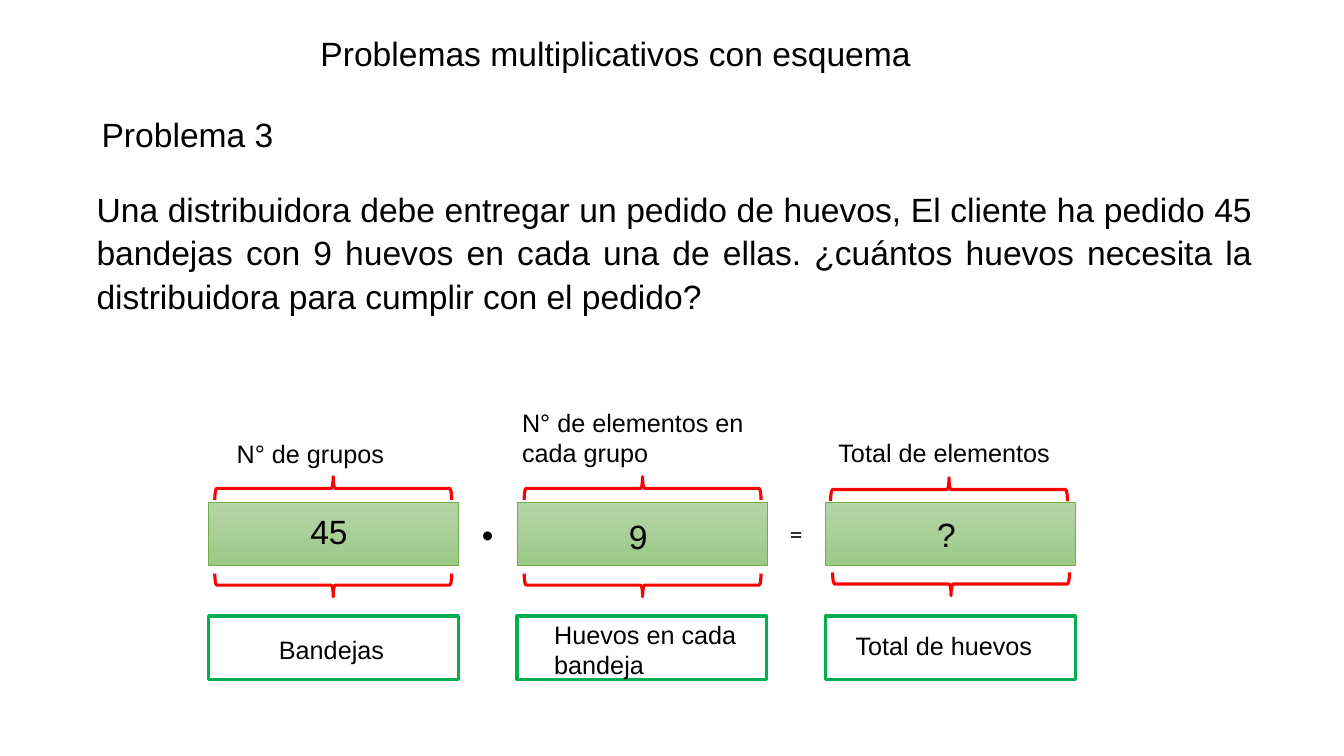
"""Build a slide that solves a multiplication problem with a bar scheme."""
from pptx import Presentation
from pptx.dml.color import RGBColor as RGB
from pptx.enum.shapes import MSO_SHAPE as Shape
from pptx.enum.text import MSO_AUTO_SIZE as Fit, PP_ALIGN as Align
from pptx.util import Pt

TITLE = ("Problemas multiplicativos con esquema", (221.8, 20.2, 440.6, 36))
HEAD = ("Problema 3", (65.5, 75.6, 139, 36.7))
BODY = ("Una distribuidora debe entregar un pedido de huevos, El cliente ha "
        "pedido 45 bandejas con 9 huevos en cada una de ellas. ¿cuántos huevos "
        "necesita la distribuidora para cumplir con el pedido?",
        (61.9, 129.6, 839.5, 99.4))
PARTS = [
    {"label": ("N° de grupos", (162, 309.6, 141.1, 28.8)),
     "value": ("45", (214.6, 361.4, 47.5, 36)),
     "unit": ("Bandejas", (192.2, 449.3, 91.4, 28.8)),
     "braces": ((238, 348.8), (238, 418))},
    {"label": ("N° de elementos en cada grupo", (365.8, 287.3, 185.8, 51.1)),
     "value": ("9", (442.1, 365, 28.1, 36)),
     "unit": ("Huevos en cada bandeja", (388.8, 438.5, 154.1, 51.1)),
     "braces": ((459, 348.8), (459, 418))},
    {"label": ("Total de elementos", (591.8, 308.9, 185.8, 28.8)),
     "value": ("?", (662.4, 363.6, 33.1, 36)),
     "unit": ("Total de huevos", (604.1, 446.4, 162, 28.8)),
     "braces": ((677.9, 349.6), (679.3, 417.2))},
]
SIGNS = ["•", "="]

THEME = {
    "ink": RGB(0, 0, 0), "white": RGB(255, 255, 255),
    "red": RGB(255, 0, 0), "green": RGB(0, 176, 80),
    "edge": RGB(0x70, 0xAD, 0x47),
    "fade": (RGB(0xB5, 0xD5, 0xA7), RGB(0x9C, 0xC9, 0x87)),
    "font": "Arial", "math": "Calibri", "big": 24, "small": 18,
    "thin": 0.5, "thick": 2.25,
}

LEFT, PITCH = 149, 220.3
WIDE, HIGH = 178.5, 45.4
BAR_TOP, BOX_TOP = 358.6, 440
BRACE_W, BRACE_H = 16.6, 169.2
SIGN_W, SIGN_H, SIGN_TOP = 27.4, 28.8, 366.5


def write(slide, text, box, size="small", font="font", align=None,
          wrap=True, space=None, after=None):
    """Add one text box."""
    frame = slide.shapes.add_textbox(*map(Pt, box)).text_frame
    frame.word_wrap = wrap
    frame.auto_size = Fit.SHAPE_TO_FIT_TEXT
    para = frame.paragraphs[0]
    para.alignment = align
    para.line_spacing = space
    if after is not None:
        para.space_after = Pt(after)
    run = para.add_run()
    run.text = text
    run.font.name = THEME[font]
    run.font.size = Pt(THEME[size])
    run.font.color.rgb = THEME["ink"]


def draw(slide, kind, box, line, width):
    """Add one outlined shape."""
    shape = slide.shapes.add_shape(kind, *map(Pt, box))
    shape.shadow.inherit = False
    shape.line.color.rgb = THEME[line]
    shape.line.width = Pt(THEME[width])
    return shape


def column(slide, part, left):
    """Add a bar, its braces, its unit box and their texts."""
    bar = draw(slide, Shape.RECTANGLE, (left, BAR_TOP, WIDE, HIGH), "edge", "thin")
    bar.fill.gradient()
    bar.fill.gradient_angle = 270
    for stop, color in zip(bar.fill.gradient_stops, THEME["fade"]):
        stop.color.rgb = color
    for (mid, level), turn in zip(part["braces"], (270, 90)):
        spot = (mid - BRACE_W / 2, level - BRACE_H / 2, BRACE_W, BRACE_H)
        brace = draw(slide, Shape.RIGHT_BRACE, spot, "red", "thick")
        brace.fill.background()
        brace.rotation = turn
    unit = draw(slide, Shape.RECTANGLE, (left, BOX_TOP, WIDE, HIGH), "green", "thick")
    unit.fill.solid()
    unit.fill.fore_color.rgb = THEME["white"]
    write(slide, *part["label"])
    write(slide, *part["value"], size="big", wrap=part["value"][0] != "9")
    write(slide, *part["unit"])


def main():
    """Build and save the slide."""
    deck = Presentation()
    deck.slide_width, deck.slide_height = Pt(960), Pt(540)
    slide = deck.slides.add_slide(deck.slide_layouts[6])
    prose = {"size": "big", "align": Align.JUSTIFY, "space": 1.07, "after": 8}
    write(slide, *TITLE, size="big")
    write(slide, *HEAD, wrap=False, **prose)
    write(slide, *BODY, **prose)
    for i, part in enumerate(PARTS):
        column(slide, part, LEFT + i * PITCH)
    gap = PITCH - WIDE
    for i, sign in enumerate(SIGNS):
        left = LEFT + i * PITCH + WIDE + (gap - SIGN_W) / 2
        write(slide, sign, (left, SIGN_TOP, SIGN_W, SIGN_H),
              font="math", align=Align.CENTER)
    deck.save("out.pptx")


if __name__ == "__main__":
    main()
